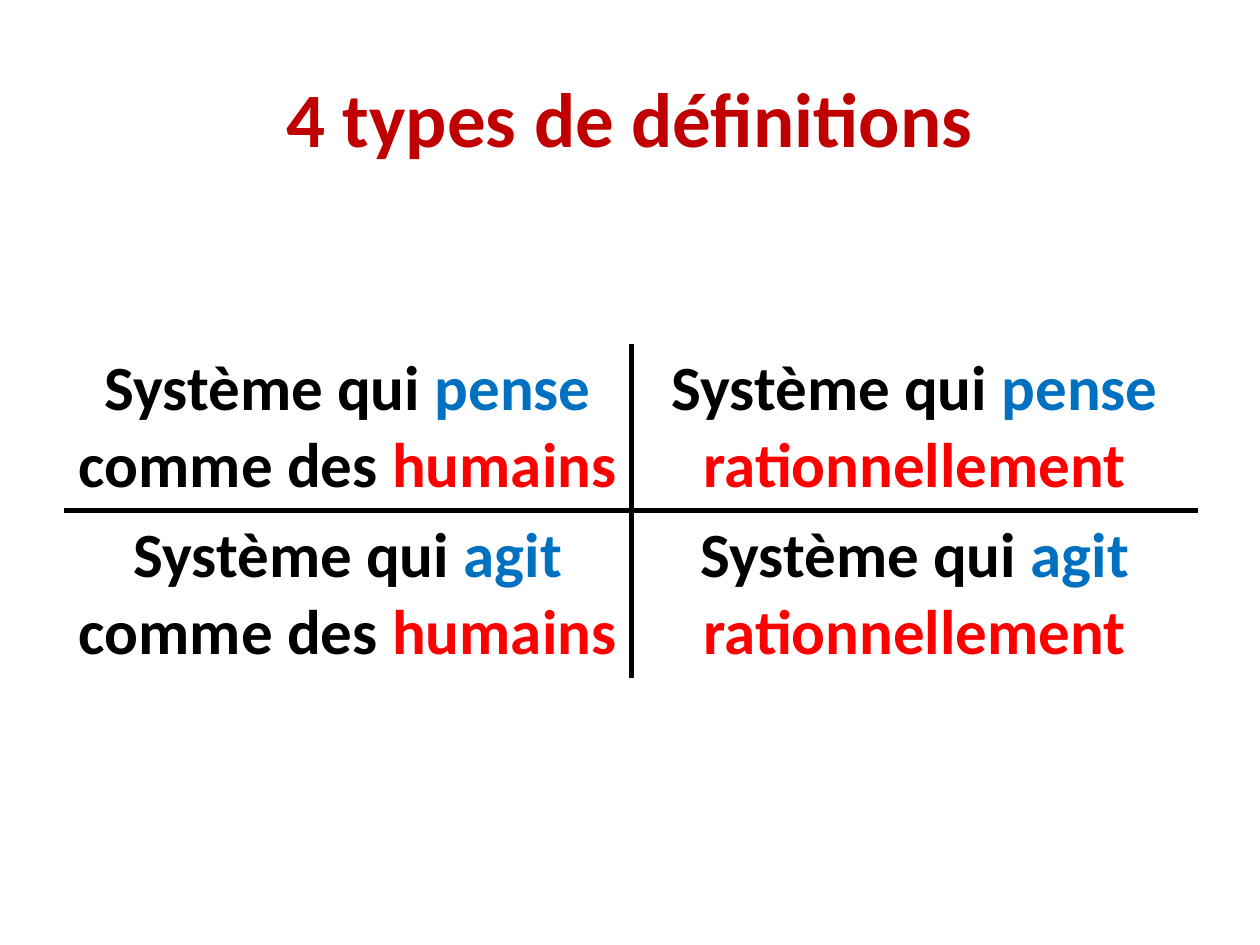
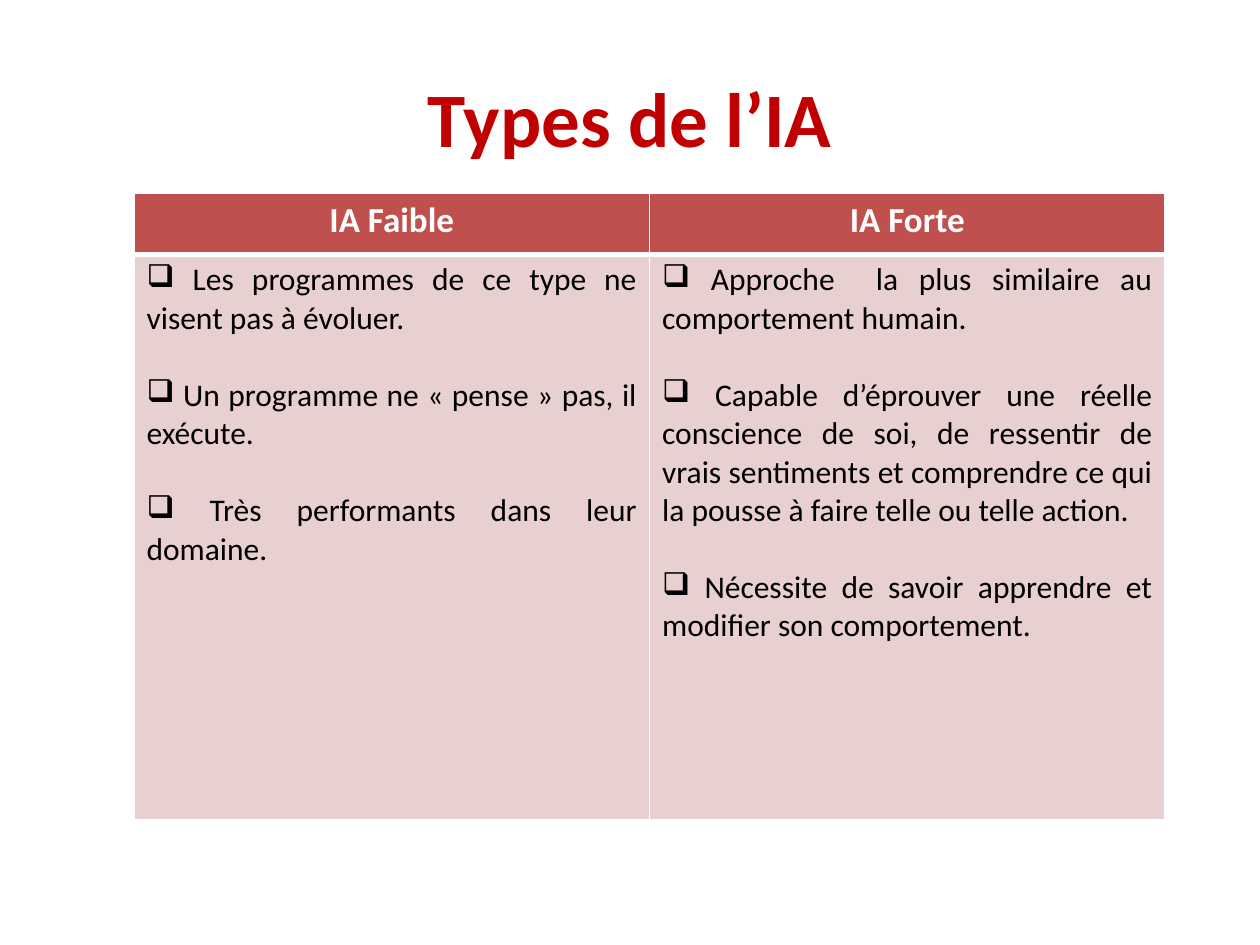
from dataclasses import dataclass

from lxml.etree import SubElement
from pptx import Presentation
from pptx.dml.color import RGBColor
from pptx.enum.text import MSO_ANCHOR, PP_ALIGN
from pptx.oxml.ns import qn
from pptx.util import Pt


@dataclass(frozen=True)
class Theme:
    font: str = "Calibri"
    title_color: str = "C00000"
    ink: str = "000000"
    paper: str = "FFFFFF"
    verb: str = "0070C0"
    manner: str = "FF0000"
    header_fill: str = "C0504D"
    body_fill: str = "E8D0D0"
    title_size: float = 44
    definition_size: float = 36
    header_size: float = 20
    body_size: float = 18
    plain_table: str = "{2D5ABB26-0587-4C30-8999-92F81FD0307C}"


THEME = Theme()


def write(paragraph, text, *, size, color=THEME.ink, bold=False,
          align=PP_ALIGN.CENTER, before=0, bullet=None):
    """Add one formatted run and set the format of its paragraph."""
    paragraph.alignment = align
    paragraph.space_before = Pt(before)
    if bullet:
        properties = paragraph._p.get_or_add_pPr()
        properties.set("marL", "0")
        properties.set("indent", "0")
        SubElement(properties, qn("a:buChar"), char=bullet)
    run = paragraph.add_run()
    run.text = text
    run.font.name = THEME.font
    run.font.size = Pt(size)
    run.font.bold = bold
    run.font.color.rgb = RGBColor.from_string(color)


class Deck:
    def __init__(self, theme):
        self.theme = theme
        self.presentation = Presentation()
        self.presentation.slide_width = Pt(720)
        self.presentation.slide_height = Pt(540)
        self.slide = None

    def start_slide(self, heading):
        layout = self.presentation.slide_layouts[5]
        self.slide = self.presentation.slides.add_slide(layout)
        title = self.slide.shapes.title
        title.left, title.top, title.width, title.height = Pt(36), Pt(21.6), Pt(648), Pt(90)
        title.text_frame.vertical_anchor = MSO_ANCHOR.MIDDLE
        write(title.text_frame.paragraphs[0], heading, size=self.theme.title_size,
              color=self.theme.title_color, bold=True)

    def table(self, left, top, column_width, row_heights, columns=2):
        frame = self.slide.shapes.add_table(
            len(row_heights), columns, Pt(left), Pt(top),
            Pt(column_width * columns), Pt(sum(row_heights)))
        table = frame.table
        table.first_row = table.horz_banding = False
        table._tbl.tblPr.find(qn("a:tableStyleId")).text = self.theme.plain_table
        for column in table.columns:
            column.width = Pt(column_width)
        for row, height in zip(table.rows, row_heights):
            row.height = Pt(height)
        return table

    def cell(self, cell, borders, color, fill=None):
        """Draw borders given as {side: points}, then the fill."""
        properties = cell._tc.get_or_add_tcPr()
        for side in "LRTB":
            if side in borders:
                line = SubElement(properties, qn(f"a:ln{side}"), w=str(Pt(borders[side])))
                solid = SubElement(line, qn("a:solidFill"))
                SubElement(solid, qn("a:srgbClr"), val=color)
        if fill:
            cell.fill.solid()
            cell.fill.fore_color.rgb = RGBColor.from_string(fill)
        else:
            cell.fill.background()

    def definition(self, cell, parts):
        colors = (self.theme.ink, self.theme.verb, self.theme.ink, self.theme.manner)
        for text, color in zip(parts, colors):
            write(cell.text_frame.paragraphs[0], text,
                  size=self.theme.definition_size, color=color, bold=True)

    def bullets(self, cell, points):
        frame = cell.text_frame
        for index, point in enumerate(points):
            paragraph = frame.add_paragraph() if index else frame.paragraphs[0]
            write(paragraph, " " + point, size=self.theme.body_size,
                  align=PP_ALIGN.JUSTIFY, before=22 if index else 0, bullet="❑")


def definitions_slide(deck):
    deck.start_slide("4 types de définitions")
    quadrants = deck.table(36.72, 196.56, 324, (95, 95))
    manners = ((" comme des ", "humains"), (" ", "rationnellement"))
    for row, verb in enumerate(("pense", "agit")):
        for column, manner in enumerate(manners):
            cell = quadrants.cell(row, column)
            # Only the inner cross is ruled
            deck.cell(cell, {"RL"[column]: 3, "BT"[row]: 3}, deck.theme.ink)
            deck.definition(cell, ("Système qui ", verb, *manner))


def ai_types_slide(deck):
    theme = deck.theme
    deck.start_slide("Types de l’IA")
    ai_types = {
        "IA Faible": (
            "Les programmes de ce type ne visent pas à évoluer.",
            "Un programme ne « pense » pas, il exécute.",
            "Très performants dans leur domaine.",
        ),
        "IA Forte": (
            "Approche  la plus similaire au comportement humain.",
            "Capable d’éprouver une réelle conscience de soi, de ressentir de vrais "
            "sentiments et comprendre ce qui la pousse à faire telle ou telle action.",
            "Nécessite de savoir apprendre et modifier son comportement.",
        ),
    }
    comparison = deck.table(76.6, 110.16, 294.6, (35.3, 323))
    for column, (name, points) in enumerate(ai_types.items()):
        # Header
        header = comparison.cell(0, column)
        deck.cell(header, {"L": 1, "R": 1, "T": 1, "B": 3}, theme.paper, theme.header_fill)
        write(header.text_frame.paragraphs[0], name, size=theme.header_size,
              color=theme.paper, bold=True)
        # Characteristics
        body = comparison.cell(1, column)
        deck.cell(body, {"L": 1, "R": 1, "T": 3, "B": 1}, theme.paper, theme.body_fill)
        deck.bullets(body, points)


def main():
    deck = Deck(THEME)
    definitions_slide(deck)
    ai_types_slide(deck)
    deck.presentation.save("out.pptx")


if __name__ == "__main__":
    main()
